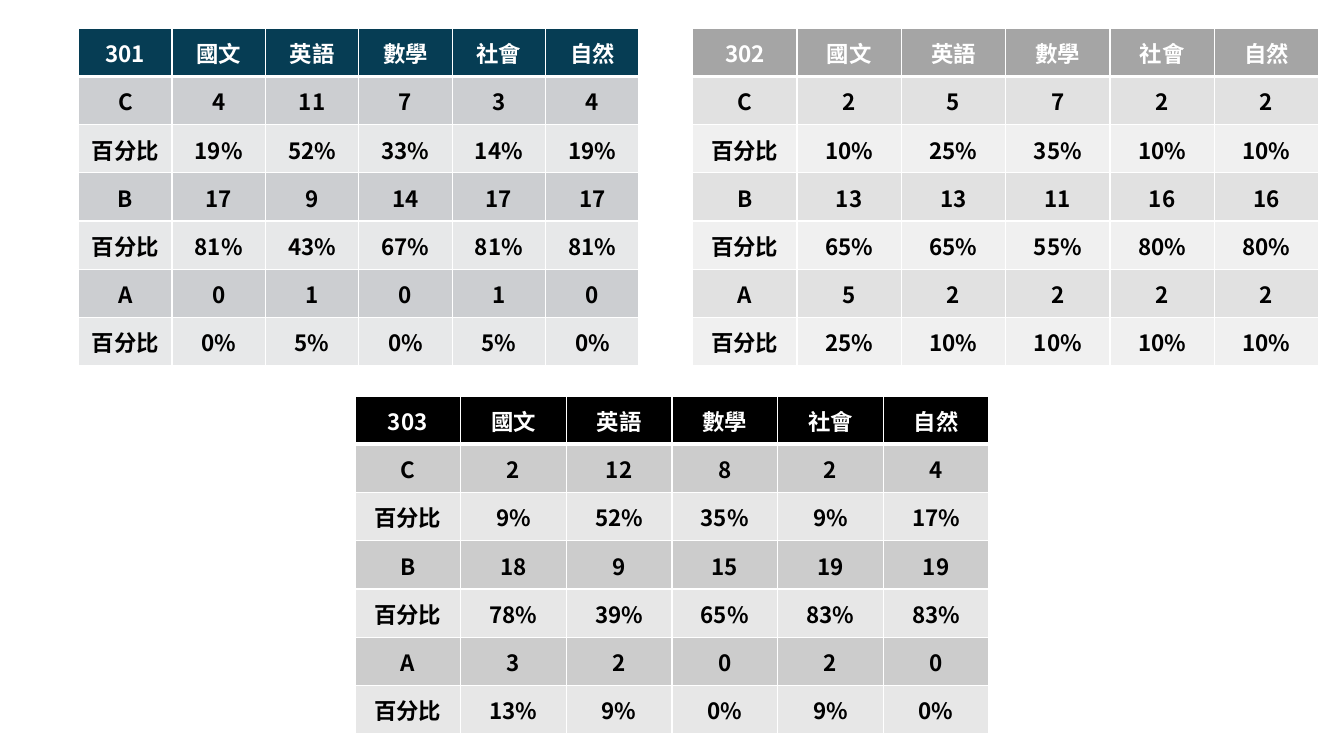
from dataclasses import dataclass

import lxml.etree
import pptx
import pptx.dml.color
import pptx.enum.text
import pptx.oxml.ns
import pptx.util

Inches = pptx.util.Inches
Pt = pptx.util.Pt
qn = pptx.oxml.ns.qn

FONT = "Noto Sans CJK TC"
SUBJECTS = ["國文", "英語", "數學", "社會", "自然"]
GRADES = ["C", "B", "A"]
WHITE = "FFFFFF"
BLACK = "000000"


@dataclass
class ClassTable:
    name: str
    left: float
    top: float
    width: float
    header_fill: str
    count_fill: str
    percent_fill: str
    counts: list[list[int]]

    def rows(self) -> list[list[str]]:
        totals = [sum(column) for column in zip(*self.counts)]
        lines = [[self.name, *SUBJECTS]]
        for grade, counts in zip(GRADES, self.counts):
            lines.append([grade, *map(str, counts)])
            lines.append(["百分比", *(f"{n / total:.0%}" for n, total in zip(counts, totals))])
        return lines

    def fill(self, row: int) -> str:
        if row == 0:
            return self.header_fill
        return self.count_fill if row % 2 else self.percent_fill


CLASSES = [
    ClassTable("301", 0.78, 0.28, 5.56, "063D54", "CCCED1", "E7E8E9",
               [[4, 11, 7, 3, 4], [17, 9, 14, 17, 17], [0, 1, 0, 1, 0]]),
    ClassTable("302", 6.87, 0.28, 6.21, "A5A5A5", "E1E1E1", "F0F0F0",
               [[2, 5, 7, 2, 2], [13, 13, 11, 16, 16], [5, 2, 2, 2, 2]]),
    ClassTable("303", 3.52, 3.93, 6.29, "000000", "CCCCCC", "E7E7E7",
               [[2, 12, 8, 2, 4], [18, 9, 15, 19, 19], [3, 2, 0, 2, 0]]),
]


def colour(value: str) -> pptx.dml.color.RGBColor:
    return pptx.dml.color.RGBColor.from_string(value)


def set_borders(cell, row: int) -> None:
    properties = cell._tc.get_or_add_tcPr()
    widths = {"lnL": 1, "lnR": 1, "lnT": 3 if row == 1 else 1, "lnB": 3 if row == 0 else 1}
    for side, width in widths.items():
        line = lxml.etree.SubElement(properties, qn(f"a:{side}"), w=str(Pt(width)))
        fill = lxml.etree.SubElement(line, qn("a:solidFill"))
        lxml.etree.SubElement(fill, qn("a:srgbClr"), val=WHITE)


def write_cell(cell, text: str, row: int, fill: str) -> None:
    set_borders(cell, row)
    cell.fill.solid()
    cell.fill.fore_color.rgb = colour(fill)
    cell.vertical_anchor = pptx.enum.text.MSO_ANCHOR.MIDDLE
    cell.margin_left = cell.margin_right = cell.margin_top = Inches(0.01)
    cell.margin_bottom = 0
    cell.text = text
    para = cell.text_frame.paragraphs[0]
    para.alignment = pptx.enum.text.PP_ALIGN.CENTER
    font = para.font
    font.size = Pt(16)
    font.bold = True
    font.color.rgb = colour(BLACK if row else WHITE)
    font.name = FONT
    lxml.etree.SubElement(font._element, qn("a:ea"), typeface=FONT)


def draw_class(page, group: ClassTable) -> None:
    rows = group.rows()
    frame = page.shapes.add_table(len(rows), len(rows[0]), Inches(group.left), Inches(group.top),
                                  Inches(group.width), Inches(3.35))
    frame.name = f"Class {group.name}"
    for row, texts in enumerate(rows):
        for column, text in enumerate(texts):
            write_cell(frame.table.cell(row, column), text, row, group.fill(row))


def main() -> None:
    deck = pptx.Presentation()
    deck.slide_width = Inches(13.33)
    deck.slide_height = Inches(7.5)
    page = deck.slides.add_slide(deck.slide_layouts[6])
    for group in CLASSES:
        draw_class(page, group)
    deck.save("out.pptx")


if __name__ == "__main__":
    main()
